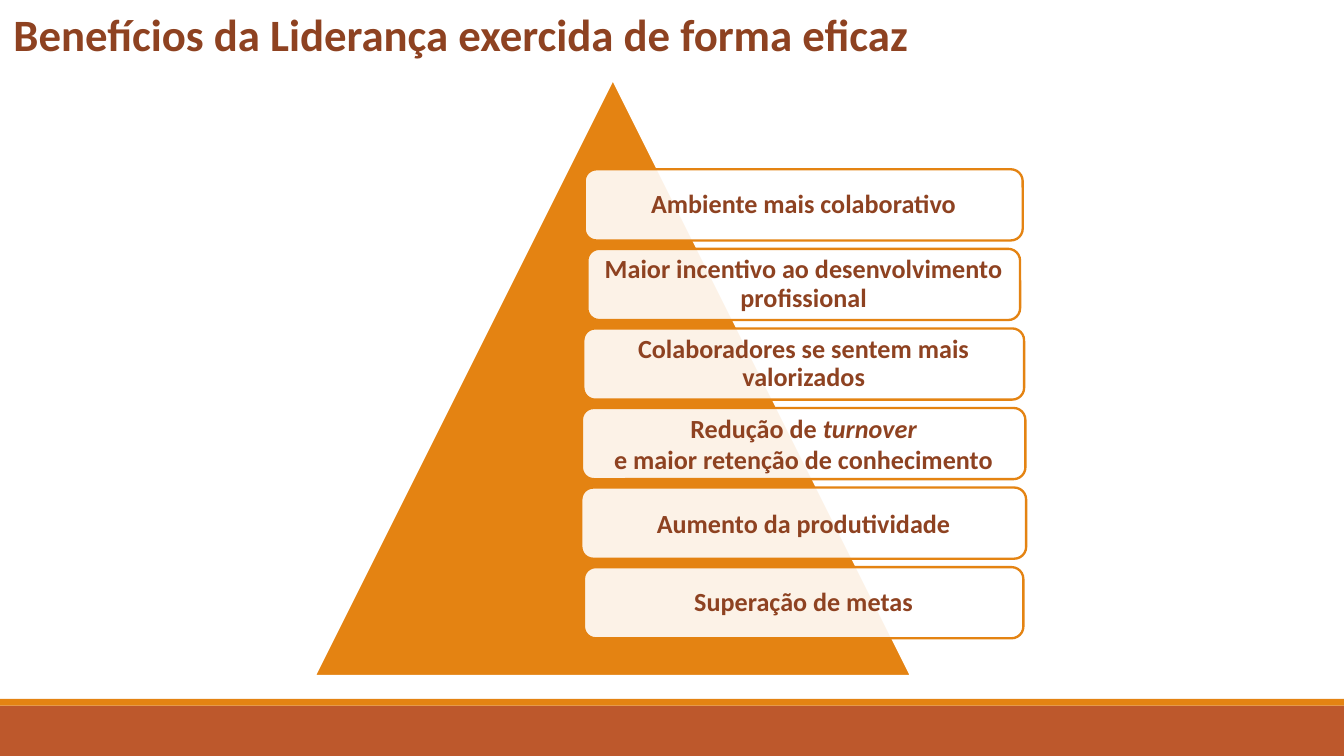
from pptx import Presentation
from pptx.dml.color import RGBColor
from pptx.enum.shapes import MSO_SHAPE
from pptx.enum.text import MSO_ANCHOR, MSO_AUTO_SIZE, PP_ALIGN
from pptx.oxml.ns import qn
from pptx.util import Inches, Pt
from lxml.etree import SubElement

THEME = {
    "orange": RGBColor(0xE4, 0x83, 0x12),
    "rust": RGBColor(0xBD, 0x58, 0x2C),
    "brown": RGBColor(0x8E, 0x42, 0x21),
    "white": RGBColor(0xFF, 0xFF, 0xFF),
    "font": "Calibri",
    "title": Pt(24),
    "label": Pt(14),
    "line": Pt(1.25),
}

prs = Presentation()
prs.slide_width, prs.slide_height = Inches(10), Inches(5.625)
U = prs.slide_width / 100
W, H = 100, 56.25
s = prs.slides.add_slide(prs.slide_layouts[5])


def add_block(kind, x, y, w, h, fill, line=None):
    sp = s.shapes.add_shape(kind, *(int(v * U) for v in (x, y, w, h)))
    sp.shadow.inherit = False
    sp.fill.solid()
    sp.fill.fore_color.rgb = THEME[fill]
    if line:
        sp.line.color.rgb = THEME[line]
        sp.line.width = THEME["line"]
    else:
        sp.line.fill.background()
    return sp


def add_run(p, text, size, italic=False):
    r = p.add_run()
    r.text = text
    fmt = {"name": THEME["font"], "size": THEME[size], "bold": True, "italic": italic}
    for key, value in fmt.items():
        setattr(r.font, key, value)
    r.font.color.rgb = THEME["brown"]


add_block(MSO_SHAPE.RECTANGLE, 0, 52.5, W, H - 52.5, "rust")
add_block(MSO_SHAPE.RECTANGLE, 0, 52, W, 0.5, "orange")

sp = s.shapes.title
for key, value in {"left": 0, "top": 0, "width": W, "height": 5}.items():
    setattr(sp, key, int(value * U))
tf = sp.text_frame
for key, value in {"word_wrap": True, "auto_size": MSO_AUTO_SIZE.NONE,
                   "vertical_anchor": MSO_ANCHOR.MIDDLE}.items():
    setattr(tf, key, value)
p = tf.paragraphs[0]
p.alignment = PP_ALIGN.LEFT
add_run(p, "Benefícios da Liderança exercida de forma eficaz", "title")

add_block(MSO_SHAPE.ISOSCELES_TRIANGLE, 23.4, 5.9, 44.4, 44.4, "orange", "white")

benefits = [
    (32.6, 0.9, [[("Ambiente mais colaborativo", False)]]),
    (32.2, 0.9, [[("Maior incentivo ao desenvolvimento profissional", False)]]),
    (32.8, 0.9, [[("Colaboradores se sentem mais valorizados", False)]]),
    (33.0, 1.0, [[("Redução de ", False), ("turnover", True)],
                 [("e maior retenção de conhecimento", False)]]),
    (33.1, 1.0, [[("Aumento da produtividade", False)]]),
    (32.7, 0.9, [[("Superação de metas", False)]]),
]
CENTER, TOP, PITCH, HEIGHT = 59.8, 12.6, 5.92, 5.3
for i, (width, spacing, lines) in enumerate(benefits):
    sp = add_block(MSO_SHAPE.ROUNDED_RECTANGLE, CENTER - width / 2, TOP + i * PITCH,
                   width, HEIGHT, "white", "orange")
    color = sp.fill._xPr.find(qn("a:solidFill"))[0]
    SubElement(color, qn("a:alpha"), val="90000")
    tf = sp.text_frame
    tf.word_wrap = True
    tf.vertical_anchor = MSO_ANCHOR.MIDDLE
    for side in ("left", "top", "right", "bottom"):
        setattr(tf, f"margin_{side}", Inches(0.06))
    for n, runs in enumerate(lines):
        p = tf.add_paragraph() if n else tf.paragraphs[0]
        p.alignment = PP_ALIGN.CENTER
        p.line_spacing = spacing
        for text, italic in runs:
            add_run(p, text, "label", italic)

prs.save("out.pptx")
